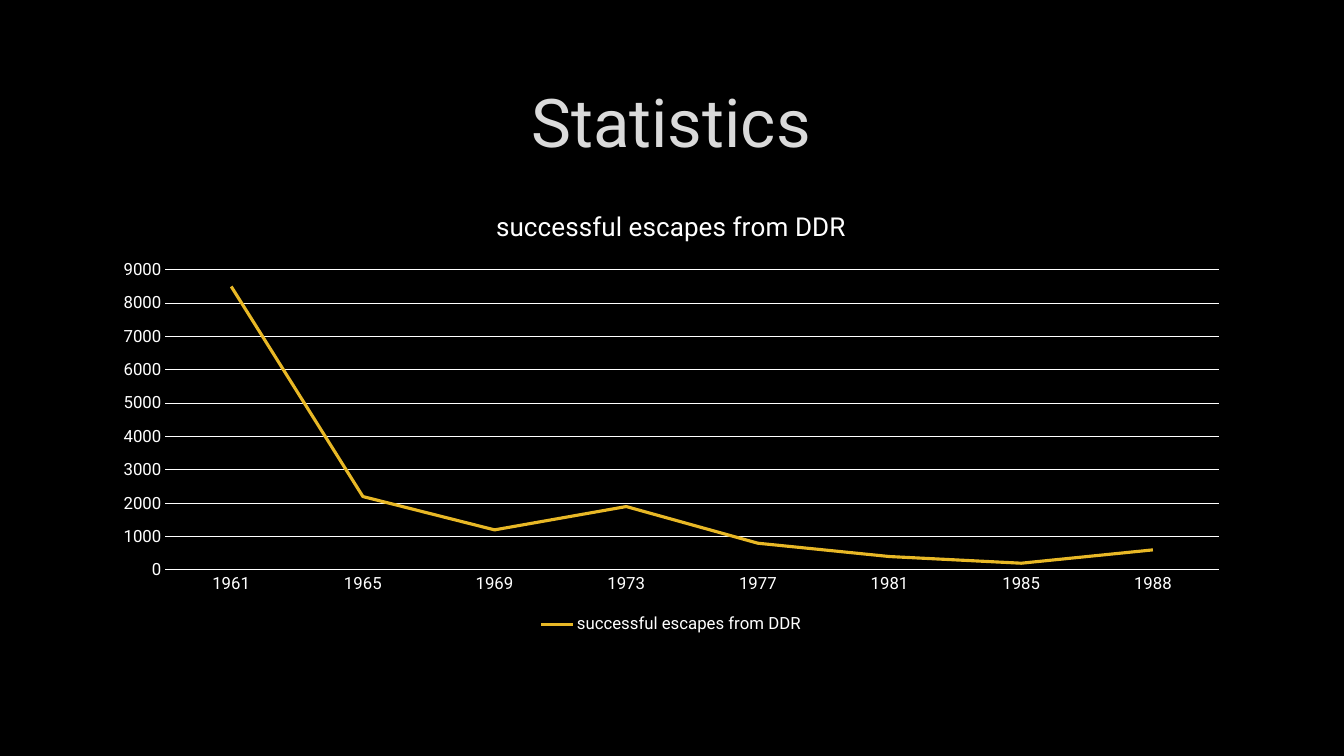
from pptx import Presentation
from pptx.chart.data import CategoryChartData
from pptx.dml.color import RGBColor
from pptx.enum.chart import XL_CHART_TYPE as ChartType
from pptx.enum.chart import XL_LEGEND_POSITION as LegendPosition
from pptx.enum.chart import XL_MARKER_STYLE as MarkerStyle
from pptx.enum.chart import XL_TICK_MARK as TickMark
from pptx.enum.text import MSO_ANCHOR as Anchor
from pptx.enum.text import PP_ALIGN as Align
from pptx.util import Cm, Pt

# Content
HEADING = "Statistics"
SERIES_NAME = "successful escapes from DDR"
ESCAPES = {
    "1961": 8500, "1965": 2200, "1969": 1200, "1973": 1900,
    "1977": 800, "1981": 400, "1985": 200, "1988": 600,
}
FONT = "Roboto"
BLACK, WHITE, SILVER, GOLD = "000000", "FFFFFF", "DADADA", "E8B826"

# Layout in centimetres
SLIDE_WIDTH, SLIDE_HEIGHT = 33.87, 19.05
MARGIN = 2.54
CONTENT_WIDTH = 28.75
HEADING_TOP, HEADING_HEIGHT = 1.7, 2.69
CHART_TOP, CHART_HEIGHT = 4.8, 11.28


def color(hex_text):
    return RGBColor.from_string(hex_text)


def style_font(font, size, hex_text):
    font.name = FONT
    font.size = Pt(size)
    font.bold = False
    font.color.rgb = color(hex_text)


def style_line(line, width, hex_text):
    line.width = Pt(width)
    line.color.rgb = color(hex_text)


def add_heading(page):
    box = page.shapes.add_textbox(
        Cm(MARGIN), Cm(HEADING_TOP), Cm(CONTENT_WIDTH), Cm(HEADING_HEIGHT))
    frame = box.text_frame
    frame.word_wrap = True
    frame.vertical_anchor = Anchor.MIDDLE
    para = frame.paragraphs[0]
    para.alignment = Align.CENTER
    span = para.add_run()
    span.text = HEADING
    style_font(span.font, 48, SILVER)


def add_escape_chart(page):
    data = CategoryChartData()
    data.categories = list(ESCAPES)
    data.add_series(SERIES_NAME, list(ESCAPES.values()))
    chart = page.shapes.add_chart(
        ChartType.LINE, Cm(MARGIN), Cm(CHART_TOP),
        Cm(CONTENT_WIDTH), Cm(CHART_HEIGHT), data).chart
    style_font(chart.font, 10, WHITE)

    # Chart title and legend
    chart.has_title = True
    span = chart.chart_title.text_frame.paragraphs[0].add_run()
    span.text = SERIES_NAME
    style_font(span.font, 18.6, WHITE)
    chart.chart_title.include_in_layout = False
    chart.has_legend = True
    chart.legend.position = LegendPosition.BOTTOM
    chart.legend.include_in_layout = False
    style_font(chart.legend.font, 12, WHITE)

    # Axes
    years, counts = chart.category_axis, chart.value_axis
    for axis in (years, counts):
        axis.major_tick_mark = axis.minor_tick_mark = TickMark.NONE
        style_font(axis.tick_labels.font, 12, WHITE)
    style_line(years.format.line, 0.75, WHITE)
    counts.format.line.fill.background()
    counts.minimum_scale, counts.maximum_scale = 0, 9000
    counts.major_unit = 1000
    counts.has_major_gridlines = True
    style_line(counts.major_gridlines.format.line, 0.75, WHITE)

    # Line
    plot = chart.plots[0]
    plot.vary_by_categories = False
    series = plot.series[0]
    series.smooth = False
    series.marker.style = MarkerStyle.NONE
    style_line(series.format.line, 2.25, GOLD)


def main():
    deck = Presentation()
    deck.slide_width, deck.slide_height = Cm(SLIDE_WIDTH), Cm(SLIDE_HEIGHT)
    page = deck.slides.add_slide(deck.slide_layouts[6])
    page.background.fill.solid()
    page.background.fill.fore_color.rgb = color(BLACK)
    add_heading(page)
    add_escape_chart(page)
    deck.save("out.pptx")


if __name__ == "__main__":
    main()
